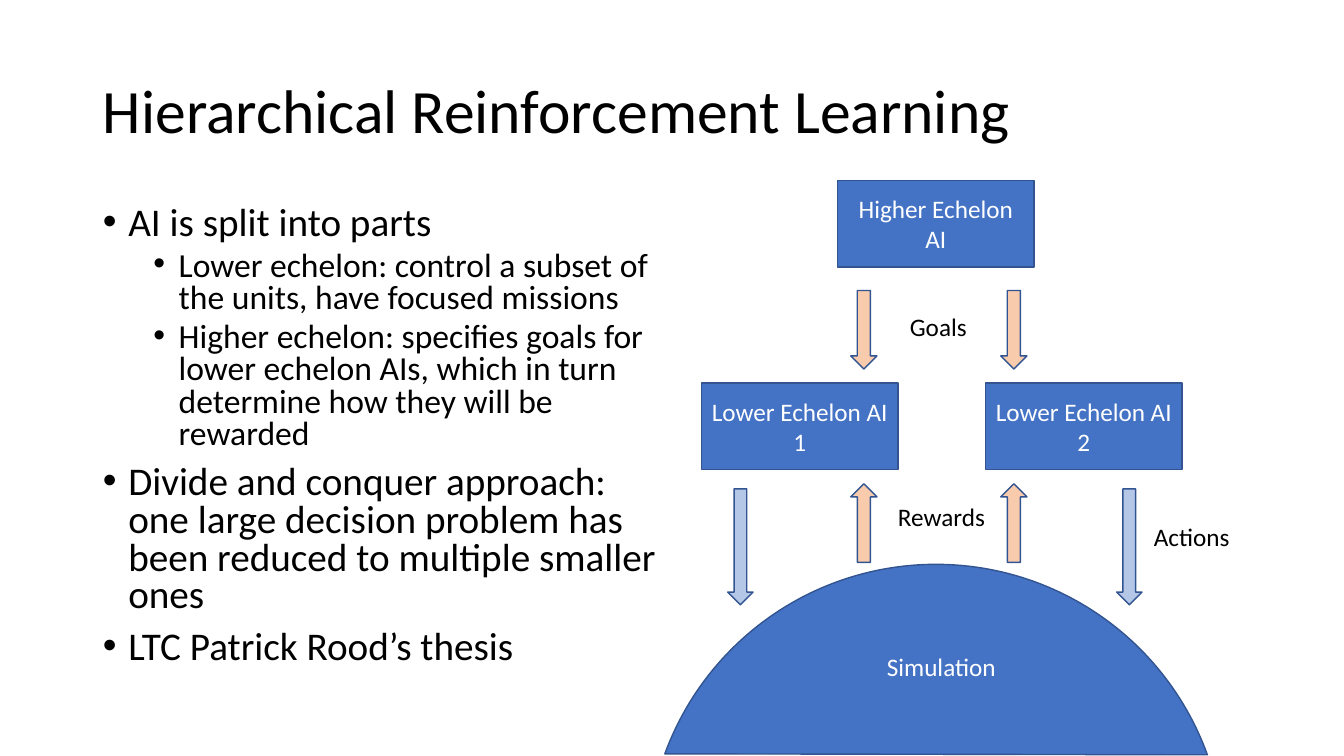
from lxml import etree
from pptx import Presentation
from pptx import util as u
from pptx.dml import color
from pptx.enum import shapes, text
from pptx.oxml import ns

BLUE = color.RGBColor(0x44, 0x72, 0xC4)
EDGE = color.RGBColor(0x32, 0x54, 0x91)
PEACH = color.RGBColor(0xF8, 0xCB, 0xAD)
PALE = color.RGBColor(0xB4, 0xC7, 0xE7)
BLACK = color.RGBColor(0, 0, 0)
WHITE = color.RGBColor(0xFF, 0xFF, 0xFF)
FONT = "Calibri"
KIND = shapes.MSO_SHAPE

TITLE = "Hierarchical Reinforcement Learning"
POINTS = [
    (0, "AI is split into parts"),
    (1, "Lower echelon: control a subset of the units, have focused missions"),
    (1, "Higher echelon: specifies goals for lower echelon AIs, "
        "which in turn determine how they will be rewarded"),
    (0, "Divide and conquer approach: one large decision problem "
        "has been reduced to multiple smaller ones"),
    (0, "LTC Patrick Rood’s thesis"),
]
LEVELS = [(28, 10, 0.64), (24, 5, 1.91)]
INDENT = 0.64

BOXES = [
    ("Higher Echelon AI", 21.11, 4.55),
    ("Lower Echelon AI 2", 24.84, 9.65),
    ("Lower Echelon AI 1", 17.68, 9.65),
]
BOX = (4.95, 2.18)
INNER = (21.44, 25.22)
OUTER = (18.34, 28.14)
FLOWS = [
    (INNER, 7.32, 0.66, 1.98, PEACH, 0),
    (OUTER, 12.32, 0.64, 2.92, PALE, 0),
    (INNER, 12.19, 0.66, 1.98, PEACH, 180),
]
DOME = (16.31, 14.22, 14.55, 14.55)
LABELS = [
    ("Simulation", 22.1, 16.28, 3.3, WHITE),
    ("Goals", 22.68, 7.72, 1.96, BLACK),
    ("Rewards", 22.38, 12.52, 2.72, BLACK),
    ("Actions", 28.83, 13.0, 2.44, BLACK),
]


def lengths(*nums):
    return [u.Cm(n) for n in nums]


def style(para, size, tint):
    for run in para.runs:
        run.font.name = FONT
        run.font.size = u.Pt(size)
        run.font.color.rgb = tint


def place(holder, left, top, width, height):
    holder.left, holder.top, holder.width, holder.height = lengths(
        left, top, width, height)
    holder.text_frame.auto_size = text.MSO_AUTO_SIZE.NONE
    return holder.text_frame


def draw(slide, kind, left, top, width, height, fill):
    shape = slide.shapes.add_shape(kind, *lengths(left, top, width, height))
    shape.shadow.inherit = False
    shape.fill.solid()
    shape.fill.fore_color.rgb = fill
    shape.line.color.rgb = EDGE
    shape.line.width = u.Pt(1)
    return shape


def add_title(slide):
    frame = place(slide.shapes.title, 2.34, 1.02, 29.21, 3.68)
    frame.text = TITLE
    frame.vertical_anchor = text.MSO_ANCHOR.MIDDLE
    para = frame.paragraphs[0]
    para.alignment = text.PP_ALIGN.LEFT
    para.line_spacing = 0.9
    style(para, 44, BLACK)


def add_points(slide):
    frame = place(slide.placeholders[1], 2.34, 5.08, 14.66, 12.09)
    frame.text = "\n".join(line for _, line in POINTS)
    for para, (level, _) in zip(frame.paragraphs, POINTS):
        size, before, margin = LEVELS[level]
        para.level = level
        para.line_spacing = 0.8
        para.space_before = u.Pt(before)
        style(para, size, BLACK)
        props = para._p.get_or_add_pPr()
        props.set("marL", str(u.Cm(margin)))
        props.set("indent", str(-u.Cm(INDENT)))
        etree.SubElement(props, ns.qn("a:buFont")).set("typeface", "Arial")
        etree.SubElement(props, ns.qn("a:buChar")).set("char", "•")


def add_diagram(slide):
    for name, left, top in BOXES:
        box = draw(slide, KIND.RECTANGLE, left, top, *BOX, BLUE)
        frame = box.text_frame
        frame.text = name
        frame.word_wrap = True
        frame.vertical_anchor = text.MSO_ANCHOR.MIDDLE
        frame.paragraphs[0].alignment = text.PP_ALIGN.CENTER
        style(frame.paragraphs[0], 18, WHITE)

    dome = draw(slide, KIND.CHORD, *DOME, BLUE)
    dome.adjustments[0] = 27
    dome.adjustments[1] = 111
    dome.rotation = 155.1

    for lefts, top, width, height, fill, turn in FLOWS:
        for left in lefts:
            arrow = draw(slide, KIND.DOWN_ARROW, left, top, width, height, fill)
            arrow.rotation = turn

    for name, left, top, width, tint in LABELS:
        label = slide.shapes.add_textbox(*lengths(left, top, width, 1.02))
        frame = label.text_frame
        frame.text = name
        frame.word_wrap = False
        frame.auto_size = text.MSO_AUTO_SIZE.SHAPE_TO_FIT_TEXT
        style(frame.paragraphs[0], 18, tint)


def main():
    deck = Presentation()
    deck.slide_width, deck.slide_height = lengths(33.87, 19.05)
    slide = deck.slides.add_slide(deck.slide_layouts[1])
    add_title(slide)
    add_points(slide)
    add_diagram(slide)
    deck.save("out.pptx")


if __name__ == "__main__":
    main()
